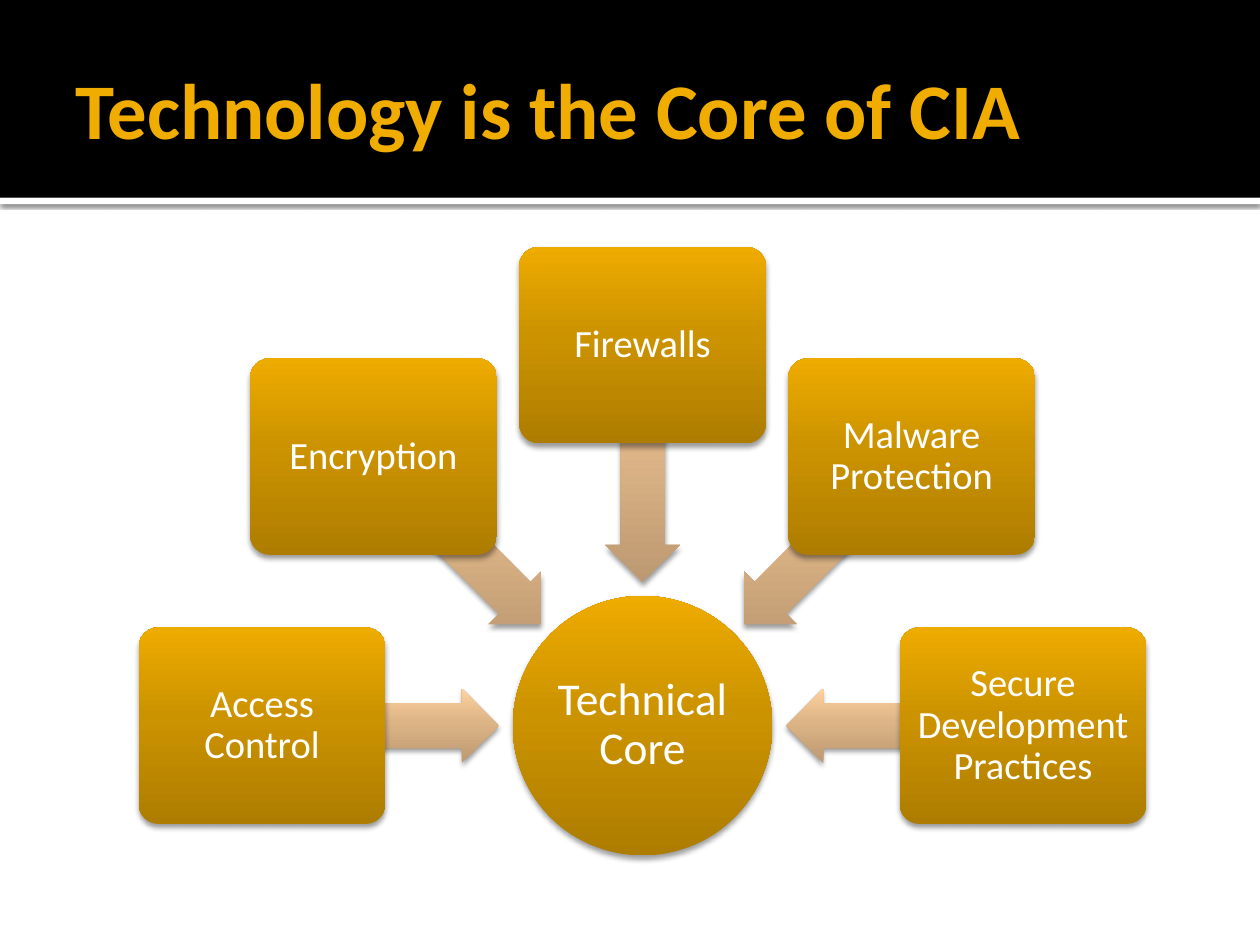
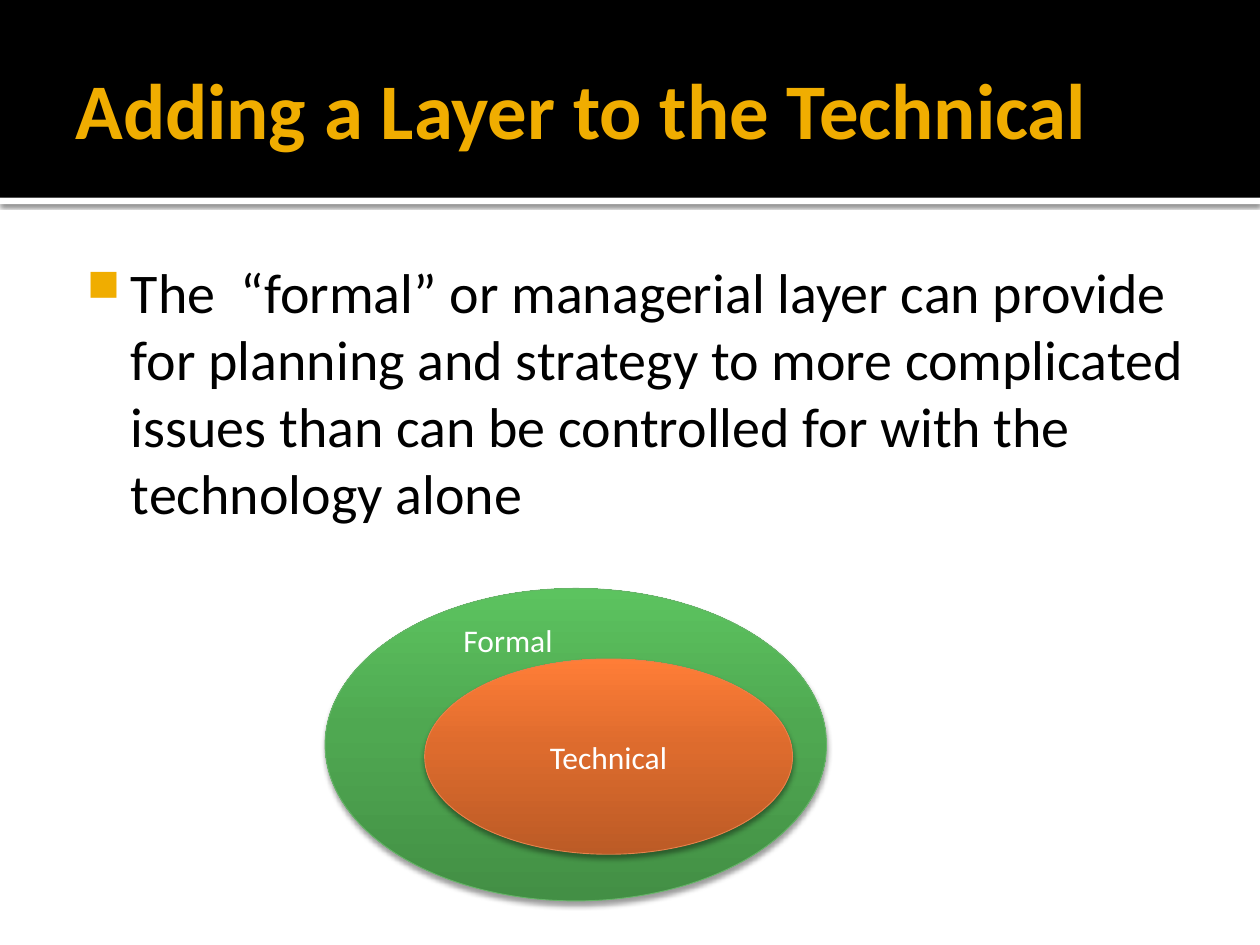
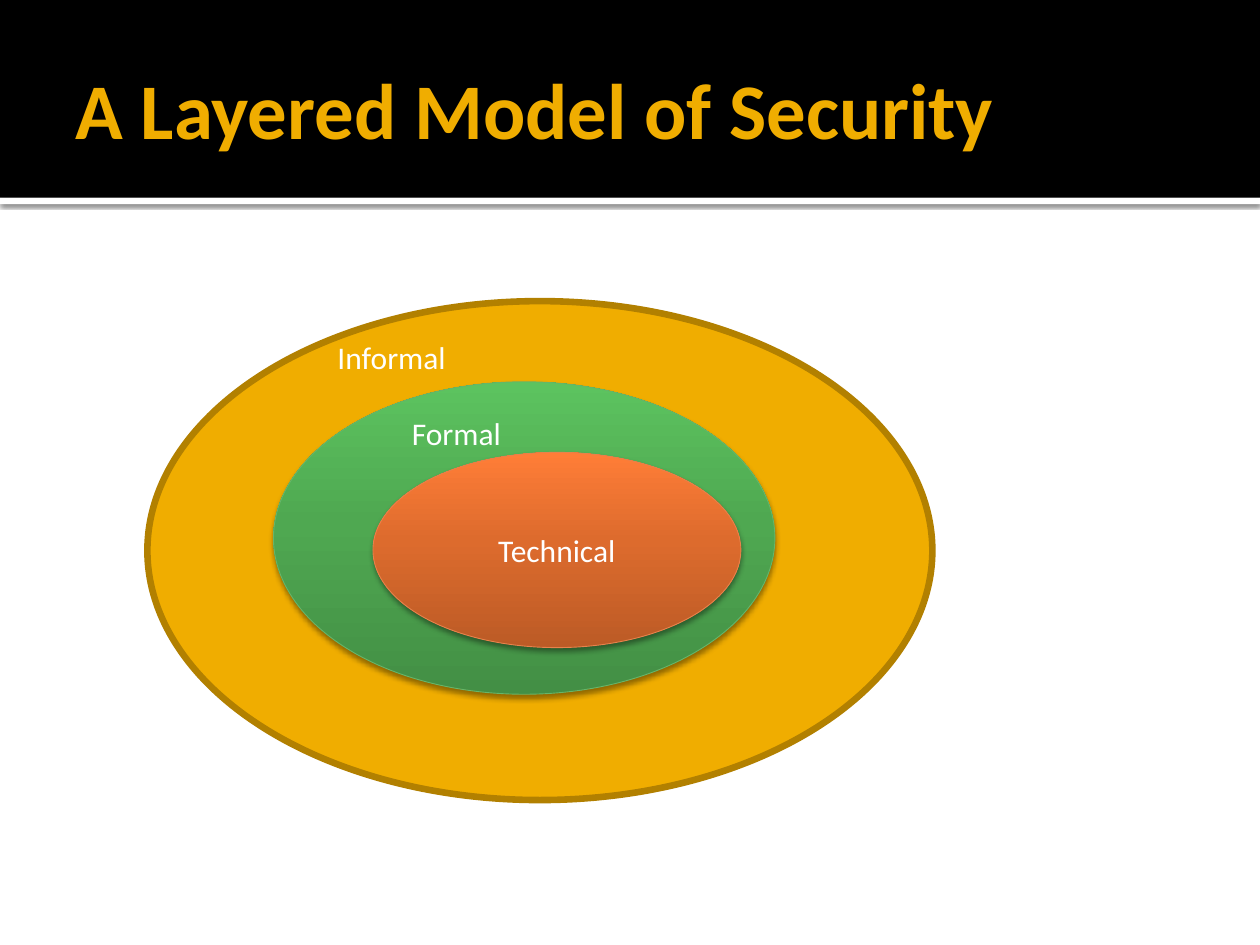
from math import cos, radians, sin

from lxml import etree
from pptx import Presentation
from pptx.dml.color import RGBColor
from pptx.enum.shapes import MSO_SHAPE
from pptx.enum.text import MSO_ANCHOR, PP_ALIGN
from pptx.oxml.ns import qn
from pptx.util import Inches, Pt

RECTANGLE = MSO_SHAPE.RECTANGLE
OVAL = MSO_SHAPE.OVAL
ROUNDED = MSO_SHAPE.ROUNDED_RECTANGLE
LEFT_ARROW = MSO_SHAPE.LEFT_ARROW
TOP, MIDDLE = MSO_ANCHOR.TOP, MSO_ANCHOR.MIDDLE
LEFT, CENTER = PP_ALIGN.LEFT, PP_ALIGN.CENTER

FONT = "Calibri"
BLACK = RGBColor(0x00, 0x00, 0x00)
WHITE = RGBColor(0xFF, 0xFF, 0xFF)
GOLD = RGBColor(0xF0, 0xAD, 0x00)
DARK_GOLD = RGBColor(0xB2, 0x80, 0x00)
GREEN_EDGE = RGBColor(0x67, 0xB5, 0x69)
ORANGE_EDGE = RGBColor(0xE7, 0x82, 0x4C)

# Gradient colours run from the bottom of a shape to its top.
STOP_POSITIONS = (0, 55, 100)
GOLD_BLEND = (RGBColor(0xAE, 0x7D, 0x00), RGBColor(0xCC, 0x93, 0x00), RGBColor(0xEE, 0xAB, 0x00))
TAN_BLEND = (RGBColor(0xBC, 0x99, 0x72), RGBColor(0xDD, 0xB4, 0x86), RGBColor(0xFF, 0xD2, 0x9F))
GREEN_BLEND = (RGBColor(0x43, 0x8F, 0x45), RGBColor(0x4F, 0xA8, 0x51), RGBColor(0x5C, 0xC3, 0x5F))
ORANGE_BLEND = (RGBColor(0xBC, 0x5B, 0x26), RGBColor(0xDD, 0x6B, 0x2D), RGBColor(0xFF, 0x7D, 0x37))

# Opacity in percent, then blur and distance in points.
SOFT_SHADOW = (38, 3.1, 2)
RULE_SHADOW = (60, 2.5, 0.8)

TITLES = (
    "Technology is the Core of CIA",
    "Adding a Layer to the Technical",
    "A Layered Model of Security",
)


def add_figure(page, kind, left, top, width, height, fill, edge=None, edge_width=0.5, shadow=None):
    """Add a preset shape; fill is one colour or a tuple of gradient colours."""
    shape = page.shapes.add_shape(kind, Inches(left), Inches(top), Inches(width), Inches(height))
    properties = shape._element.spPr
    if isinstance(fill, RGBColor):
        shape.fill.solid()
        shape.fill.fore_color.rgb = fill
    else:
        shape.fill.gradient()
        shape.fill.gradient_angle = 90
        gradient = properties.find(qn("a:gradFill"))
        gradient.set("rotWithShape", "0")
        stops = gradient.find(qn("a:gsLst"))
        for stop in list(stops):
            stops.remove(stop)
        for position, color in zip(STOP_POSITIONS, fill):
            stop = etree.SubElement(stops, qn("a:gs"), pos=str(position * 1000))
            etree.SubElement(stop, qn("a:srgbClr"), val=str(color))
    if edge is None:
        shape.line.fill.background()
    else:
        shape.line.color.rgb = edge
        shape.line.width = Pt(edge_width)
    shape.shadow.inherit = False
    if shadow:
        opacity, blur, distance = shadow
        outer = etree.SubElement(
            properties.find(qn("a:effectLst")), qn("a:outerShdw"),
            blurRad=str(Pt(blur)), dist=str(Pt(distance)), dir="5400000", rotWithShape="0")
        color = etree.SubElement(outer, qn("a:srgbClr"), val=str(BLACK))
        etree.SubElement(color, qn("a:alpha"), val=str(opacity * 1000))
    return shape


def write_text(box, text, size, color=WHITE, align=LEFT, anchor=TOP, margins=(0.1, 0.05, 0.1, 0.05)):
    """Fill a box with one paragraph; margins are left, top, right, bottom."""
    frame = box.text_frame
    frame.word_wrap = True
    frame.vertical_anchor = anchor
    frame.margin_left, frame.margin_top, frame.margin_right, frame.margin_bottom = map(Inches, margins)
    para = frame.paragraphs[0]
    para.text = text
    para.alignment = align
    para.font.name = FONT
    para.font.size = Pt(size)
    para.font.color.rgb = color
    return para


deck = Presentation()
deck.slide_width = Inches(10)
deck.slide_height = Inches(7.5)

# Title band on every slide
for title in TITLES:
    page = deck.slides.add_slide(deck.slide_layouts[6])
    add_figure(page, RECTANGLE, 0, 1.57, 10, 0.05, WHITE, shadow=RULE_SHADOW)
    add_figure(page, RECTANGLE, 0, 0, 10, 1.57, BLACK)
    title_box = page.shapes.add_textbox(Inches(0.5), Inches(0.17), Inches(9), Inches(1.37))
    para = write_text(title_box, title, 45, GOLD, anchor=MIDDLE, margins=(0.1, 0.05, 0.05, 0.05))
    para.font.bold = True

core_page, formal_page, layered_page = deck.slides

# Slide 1: controls on a half circle, each pointing at the core
CORE_X, CORE_Y, CORE_SIZE = 5.1, 5.76, 2.06
ARROW_RADIUS, ARROW_WIDTH, ARROW_HEIGHT = 2.08, 1.88, 0.59
CONTROL_RADIUS, CONTROL_WIDTH, CONTROL_HEIGHT = 3.02, 1.96, 1.56
CONTROLS = ("Access Control", "Encryption", "Firewalls", "Malware Protection",
            "Secure Development Practices")

core = add_figure(core_page, OVAL, CORE_X - CORE_SIZE / 2, CORE_Y - CORE_SIZE / 2,
                  CORE_SIZE, CORE_SIZE, GOLD_BLEND, shadow=SOFT_SHADOW)
para = write_text(core, "Technical Core", 26, align=CENTER, anchor=MIDDLE, margins=(0.02,) * 4)
para.line_spacing = 0.9

for index, control_name in enumerate(CONTROLS):
    angle = 180 + 45 * index
    across, down = cos(radians(angle)), sin(radians(angle))
    arrow = add_figure(core_page, LEFT_ARROW,
                       CORE_X + ARROW_RADIUS * across - ARROW_WIDTH / 2,
                       CORE_Y + ARROW_RADIUS * down - ARROW_HEIGHT / 2,
                       ARROW_WIDTH, ARROW_HEIGHT, TAN_BLEND, shadow=SOFT_SHADOW)
    arrow.adjustments[0] = 0.6
    arrow.rotation = angle % 360
    control = add_figure(core_page, ROUNDED,
                         CORE_X + CONTROL_RADIUS * across - CONTROL_WIDTH / 2,
                         CORE_Y + CONTROL_RADIUS * down - CONTROL_HEIGHT / 2,
                         CONTROL_WIDTH, CONTROL_HEIGHT, GOLD_BLEND, shadow=SOFT_SHADOW)
    control.adjustments[0] = 0.1
    para = write_text(control, control_name, 22, align=CENTER, anchor=MIDDLE, margins=(0.05,) * 4)
    para.line_spacing = 0.9

# Slide 2: bullet above the two layers
body = formal_page.shapes.add_textbox(Inches(0.5), Inches(1.94), Inches(9), Inches(5.06))
bullet = body.text_frame.paragraphs[0]._p.get_or_add_pPr()
bullet.set("marL", str(Inches(0.48)))
bullet.set("indent", str(Inches(-0.35)))
bullet_color = etree.SubElement(bullet, qn("a:buClr"))
etree.SubElement(bullet_color, qn("a:srgbClr"), val=str(GOLD))
etree.SubElement(bullet, qn("a:buSzPct"), val="80000")
etree.SubElement(bullet, qn("a:buChar"), char="■")
write_text(body, "The  “formal” or managerial layer can provide for planning and strategy to more "
           "complicated issues than can be controlled for with the technology alone",
           32, BLACK, margins=(0.06, 0.1, 0.1, 0.05))

# Slide 3: informal layer around the other two
add_figure(layered_page, OVAL, 1.17, 2.39, 6.23, 3.96, GOLD, DARK_GOLD, 3.78)
informal_label = layered_page.shapes.add_textbox(Inches(2.58), Inches(2.63), Inches(2), Inches(0.4))
write_text(informal_label, "Informal", 18)

# Slides 2 and 3: technical layer inside the formal layer
for page, left, top in ((formal_page, 2.58, 4.67), (layered_page, 2.17, 3.03)):
    add_figure(page, OVAL, left, top, 3.98, 2.48, GREEN_BLEND, GREEN_EDGE, shadow=SOFT_SHADOW)
    technical = add_figure(page, OVAL, left + 0.79, top + 0.56, 2.92, 1.55,
                           ORANGE_BLEND, ORANGE_EDGE, shadow=SOFT_SHADOW)
    write_text(technical, "Technical", 18, align=CENTER, anchor=MIDDLE)
    formal_label = page.shapes.add_textbox(Inches(left + 1), Inches(top + 0.21), Inches(2), Inches(0.4))
    write_text(formal_label, "Formal", 18)

deck.save("out.pptx")
